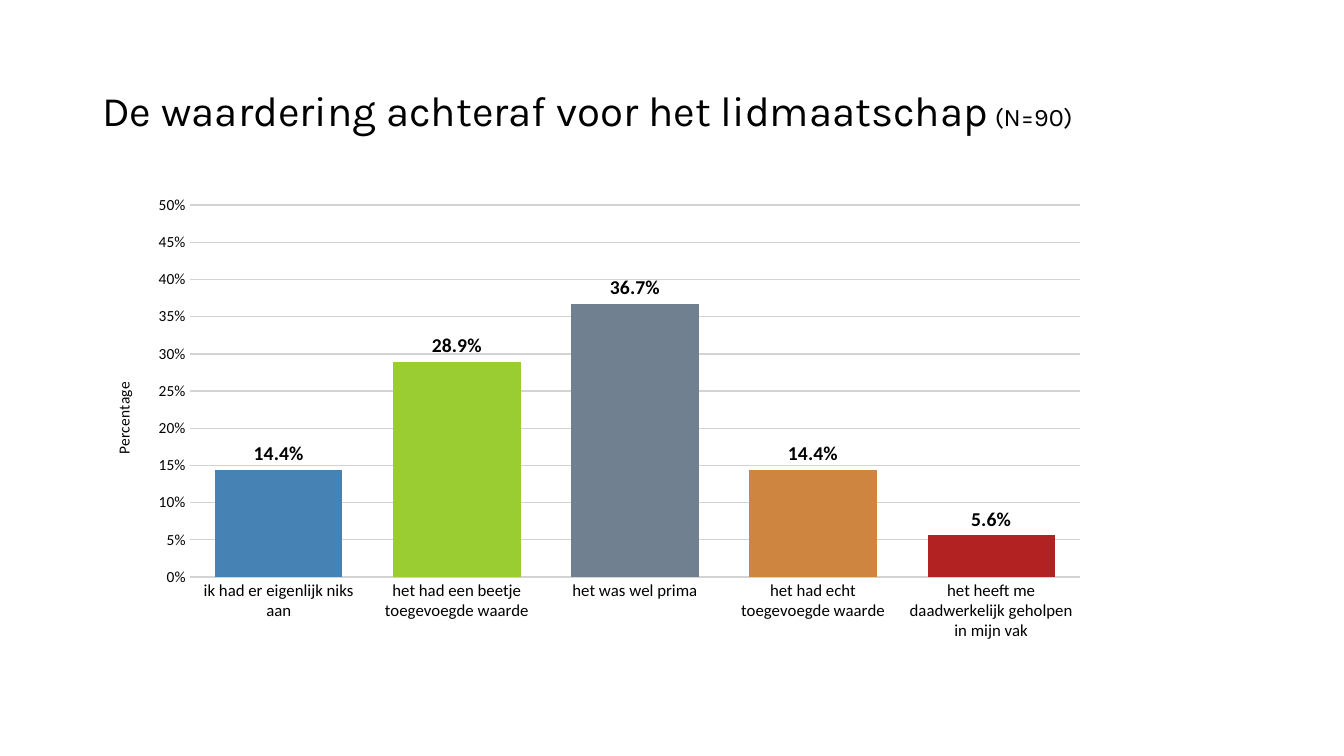
from pptx import Presentation
from pptx.chart.data import CategoryChartData
from pptx.dml.color import RGBColor
from pptx.enum.chart import XL_CHART_TYPE as ChartType
from pptx.enum.chart import XL_LABEL_POSITION as LabelPosition
from pptx.enum.chart import XL_TICK_MARK as TickMark
from pptx.enum.text import MSO_ANCHOR as Anchor
from pptx.util import Pt

ANSWERS = [
    ("ik had er eigenlijk niks aan", 0.144, "4682B4"),
    ("het had een beetje toegevoegde waarde", 0.289, "9ACD32"),
    ("het was wel prima", 0.367, "708090"),
    ("het had echt toegevoegde waarde", 0.144, "CD853F"),
    ("het heeft me daadwerkelijk geholpen in mijn vak", 0.056, "B22222"),
]


def color(hex_text):
    return RGBColor.from_string(hex_text)


def style_font(font, name, size, bold=False, ink="000000"):
    font.name = name
    font.size = Pt(size)
    font.bold = bold
    font.color.rgb = color(ink)


def add_text(paragraph, text, **style):
    run = paragraph.add_run()
    run.text = text
    style_font(run.font, **style)


class SurveySlide:
    title_font = "Karla"
    chart_font = "Calibri"
    grid_color = "D3D3D3"
    background = "FFFFFF"

    def __init__(self, presentation):
        self.slide = presentation.slides.add_slide(presentation.slide_layouts[6])

    def title(self, text, note, left, top, width, height):
        box = self.slide.shapes.add_textbox(Pt(left), Pt(top), Pt(width), Pt(height))
        frame = box.text_frame
        frame.word_wrap = True
        frame.vertical_anchor = Anchor.MIDDLE
        paragraph = frame.paragraphs[0]
        paragraph.line_spacing = 0.9
        add_text(paragraph, text, name=self.title_font, size=30)
        add_text(paragraph, note, name=self.title_font, size=18)

    def column_chart(self, answers, left, top, width, height):
        labels, values, colors = zip(*answers)
        data = CategoryChartData(number_format="0.0%")
        data.categories = labels
        data.add_series("Series 1", values)
        chart = self.slide.shapes.add_chart(
            ChartType.COLUMN_CLUSTERED, Pt(left), Pt(top), Pt(width), Pt(height), data
        ).chart
        chart.has_legend = False
        chart.has_title = False
        style_font(chart.font, self.chart_font, 11)
        self.columns(chart.plots[0], colors)
        self.axes(chart)

    def columns(self, plot, colors):
        plot.gap_width = 40
        plot.vary_by_categories = False
        series = plot.series[0]
        for index, fill_color in enumerate(colors):
            fill = series.points[index].format.fill
            fill.solid()
            fill.fore_color.rgb = color(fill_color)
        data_labels = series.data_labels
        data_labels.show_value = True
        data_labels.position = LabelPosition.OUTSIDE_END
        data_labels.number_format = "0.0%"
        data_labels.number_format_is_linked = False
        style_font(data_labels.font, self.chart_font, 14, bold=True)

    def axes(self, chart):
        for axis, size in ((chart.category_axis, 12), (chart.value_axis, 11)):
            axis.major_tick_mark = TickMark.INSIDE
            axis.minor_tick_mark = TickMark.NONE
            axis.format.line.fill.background()
            style_font(axis.tick_labels.font, self.chart_font, size)

        # Percentage scale
        scale = chart.value_axis
        scale.minimum_scale = 0
        scale.maximum_scale = 0.5
        scale.major_unit = 0.05
        scale.tick_labels.number_format = "0%"
        scale.tick_labels.number_format_is_linked = False
        grid = scale.major_gridlines.format.line
        grid.width = Pt(1)
        grid.color.rgb = color(self.grid_color)
        paragraph = scale.axis_title.text_frame.paragraphs[0]
        add_text(paragraph, "Percentage", name=self.chart_font, size=11)


def main():
    presentation = Presentation()
    presentation.slide_width = Pt(960)
    presentation.slide_height = Pt(540)
    survey = SurveySlide(presentation)

    # Heading
    survey.title("De waardering achteraf voor het lidmaatschap", " (N=90)",
                 left=66, top=28.75, width=828, height=104.4)

    # Answers as shares of all respondents
    survey.column_chart(ANSWERS, left=66, top=133.2, width=720, height=331.2)

    presentation.save("out.pptx")


if __name__ == "__main__":
    main()
